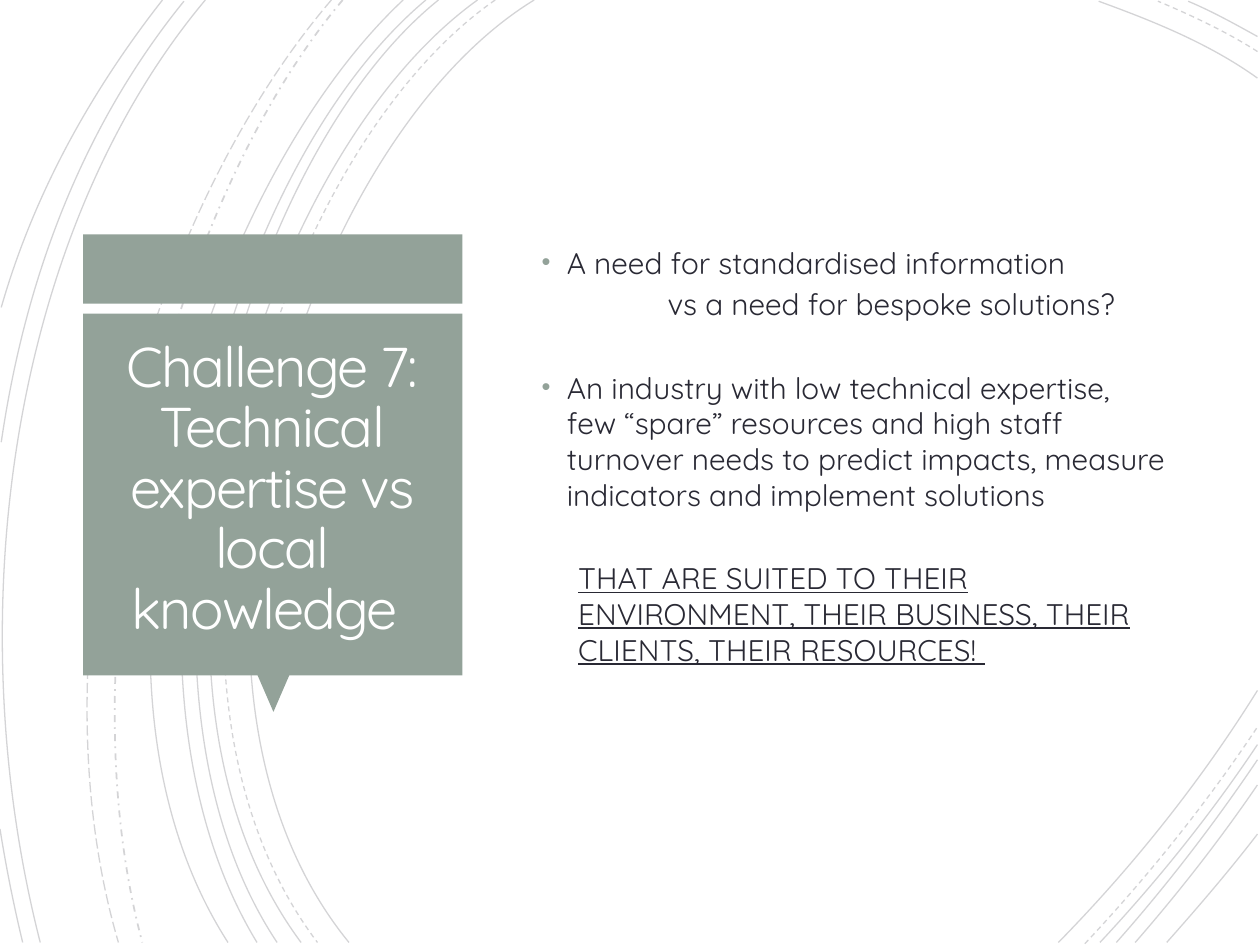
import pptx
import pptx.dml.color
import pptx.enum.dml
import pptx.enum.shapes
import pptx.enum.text
import pptx.oxml
import pptx.oxml.ns
import pptx.util
from lxml import etree

FONT = "Quicksand"
GREEN, INK, WHITE = "93A299", "292934", "FFFFFF"
DASH = pptx.enum.dml.MSO_LINE
SHAPE = pptx.enum.shapes.MSO_SHAPE

# Cubic curves in inches: start, two control points, end
SOLID_ARCS = [
    (4.24, 0, 2.36, 1.15, 1.07, 5.4, 2.77, 7.48),
    (9.98, 0.62, 9.59, 0.34, 9.13, 0.16, 8.72, 0.01),
    (8.4, 7.48, 8.97, 6.9, 9.52, 6.22, 9.98, 5.48),
    (3.79, 0, 2.02, 1.27, 0.82, 5.37, 2.39, 7.48),
    (9.98, 0.29, 9.8, 0.19, 9.62, 0.09, 9.43, 0.01),
    (8.73, 7.48, 9.17, 7.01, 9.6, 6.48, 9.98, 5.91),
    (3.48, 0, 1.83, 1.33, 0.82, 5.41, 2.2, 7.48),
    (8.86, 7.48, 9.25, 7.04, 9.63, 6.55, 9.98, 6.03),
    (3.38, 0, 1.73, 1.38, 0.73, 5.33, 2.04, 7.48),
    (9.01, 7.48, 9.35, 7.09, 9.68, 6.67, 9.98, 6.23),
    (3.2, 0, 1.63, 1.47, 0.4, 5.29, 1.81, 7.48),
    (9.26, 7.48, 9.5, 7.21, 9.75, 6.92, 9.98, 6.62),
    (1.63, 0, 0.08, 1.85, -0.34, 4.9, 0.32, 7.48),
    (1.46, 0.01, 0.69, 0.96, 0.21, 2.14, 0.01, 3.51),
    (0, 6.58, 0.05, 6.89, 0.11, 7.19, 0.18, 7.48),
    (1.29, 0, 0.75, 0.69, 0.28, 1.5, 0.01, 2.44),
]
DASHED_ARCS = [
    (3.93, 0, 2.13, 1.25, 0.92, 5.37, 2.52, 7.48),
    (9.98, 0.41, 9.73, 0.25, 9.45, 0.12, 9.19, 0.01),
    (8.61, 7.49, 9.09, 6.98, 9.56, 6.4, 9.98, 5.77),
]
DASH_DOT_ARCS = [(2.72, 0, 1.32, 1.66, 0.49, 5.09, 1.13, 7.48)]
LONG_DASH_ARCS = [(2.63, 0, 1.18, 1.69, 0.21, 4.99, 0.94, 7.48)]

# Text, left indent, hanging first line, space before (pt), bullet, underline
BODY = [
    ("A need for standardised information", 0.2, -0.2, 0, True, False),
    ("vs a need for bespoke solutions?", 1, 0, 3.4, False, False),
    ("An industry with low technical expertise, few “spare” resources and high "
     "staff turnover needs to predict impacts, measure indicators and implement "
     "solutions", 0.2, -0.2, 27.2, True, False),
    ("THAT ARE SUITED TO THEIR ENVIRONMENT, THEIR BUSINESS, THEIR CLIENTS, "
     "THEIR RESOURCES! ", 0.29, 0, 27.2, False, True),
]


def inches(value):
    return pptx.util.Cm(value * 2.54)


def rgb(hex_text):
    return pptx.dml.color.RGBColor.from_string(hex_text)


def add_curve(s, arc):
    """Freeform whose three segments become one cubic curve."""
    start, *rest = [(inches(x), inches(y)) for x, y in zip(arc[::2], arc[1::2])]
    builder = s.shapes.build_freeform(*start)
    builder.add_line_segments(rest, close=False)
    sp = builder.convert_to_shape()
    segments = list(sp.element.iter(pptx.oxml.ns.qn("a:lnTo")))
    curve = etree.SubElement(segments[0].getparent(),
                             pptx.oxml.ns.qn("a:cubicBezTo"))
    for segment in segments:
        curve.append(segment[0])
        segment.getparent().remove(segment)
    return sp


def add_arcs(s, arcs, dash, width=0.75):
    for arc in arcs:
        sp = add_curve(s, arc)
        sp.shadow.inherit = False
        sp.fill.background()
        sp.line.width = pptx.util.Pt(width)
        sp.line.color.rgb = rgb(INK)
        sp.line.dash_style = dash
        color = sp.line._ln.find(".//" + pptx.oxml.ns.qn("a:srgbClr"))
        etree.SubElement(color, pptx.oxml.ns.qn("a:alpha"), val="20000")


def add_background(s):
    add_arcs(s, SOLID_ARCS, DASH.SOLID)
    add_arcs(s, DASHED_ARCS, DASH.DASH)
    add_arcs(s, DASH_DOT_ARCS, DASH.DASH_DOT, 1)
    add_arcs(s, LONG_DASH_ARCS, DASH.LONG_DASH)


def style(p, size, color):
    for r in p.runs:
        r.font.name = FONT
        r.font.size = pptx.util.Pt(size)
        r.font.color.rgb = rgb(color)


def add_title_callout(s, x, y, w, text):
    parts = [
        (SHAPE.RECTANGLE, 0, 0, w, 0.55, 0),
        (SHAPE.ISOSCELES_TRIANGLE, 1.38, 3.49, 0.26, 0.3, 180),
        (SHAPE.RECTANGLE, 0, 0.63, w, 2.87, 0),
    ]
    for kind, dx, dy, width, height, angle in parts:
        sp = s.shapes.add_shape(kind, inches(x + dx), inches(y + dy),
                                inches(width), inches(height))
        sp.rotation = angle
        sp.shadow.inherit = False
        sp.fill.solid()
        sp.fill.fore_color.rgb = rgb(GREEN)
        sp.line.fill.background()

    title = s.shapes.title
    title.element.getparent().append(title.element)  # in front of the callout
    title.left, title.top = inches(x + 0.08), inches(y + 0.78)
    title.width, title.height = inches(w - 0.18), inches(2.62)
    tf = title.text_frame
    tf.text = text
    tf.word_wrap = True
    tf.auto_size = pptx.enum.text.MSO_AUTO_SIZE.NONE
    tf.vertical_anchor = pptx.enum.text.MSO_ANCHOR.TOP
    p = tf.paragraphs[0]
    p.alignment = pptx.enum.text.PP_ALIGN.CENTER
    p.line_spacing = 0.9
    p.space_before = pptx.util.Pt(0)
    style(p, 32, WHITE)
    p.runs[0].font._element.set("spc", "-100")


def add_bullet(p):
    pPr = p._p.get_or_add_pPr()
    for xml in (f'<a:buClr %s><a:srgbClr val="{GREEN}"/></a:buClr>',
                '<a:buSzPct %s val="85000"/>',
                '<a:buFont %s typeface="Arial"/>',
                '<a:buChar %s char="•"/>'):
        pPr.append(pptx.oxml.parse_xml(xml % pptx.oxml.ns.nsdecls("a")))


def add_body(s, x, y, w, h):
    tf = s.shapes.add_textbox(inches(x), inches(y), inches(w), inches(h)).text_frame
    tf.word_wrap = True
    for i, (text, left, first, before, bullet, underline) in enumerate(BODY):
        p = tf.add_paragraph() if i else tf.paragraphs[0]
        p.text = text
        p.space_before = pptx.util.Pt(before)
        pPr = p._p.get_or_add_pPr()
        pPr.set("marL", str(inches(left)))
        pPr.set("indent", str(inches(first)))
        if bullet:
            add_bullet(p)
        style(p, 17, INK)
        if underline:
            p.runs[0].font.underline = True


def main():
    prs = pptx.Presentation()
    prs.slide_width, prs.slide_height = inches(10), inches(7.5)
    s = prs.slides.add_slide(prs.slide_layouts[5])
    s.background.fill.solid()
    s.background.fill.fore_color.rgb = rgb(WHITE)
    add_background(s)
    add_title_callout(s, 0.66, 1.86, 3.01,
                      "Challenge 7: Technical expertise vs local knowledge ")
    add_body(s, 4.2, 1.89, 5.15, 3.6)
    prs.save("out.pptx")


if __name__ == "__main__":
    main()
